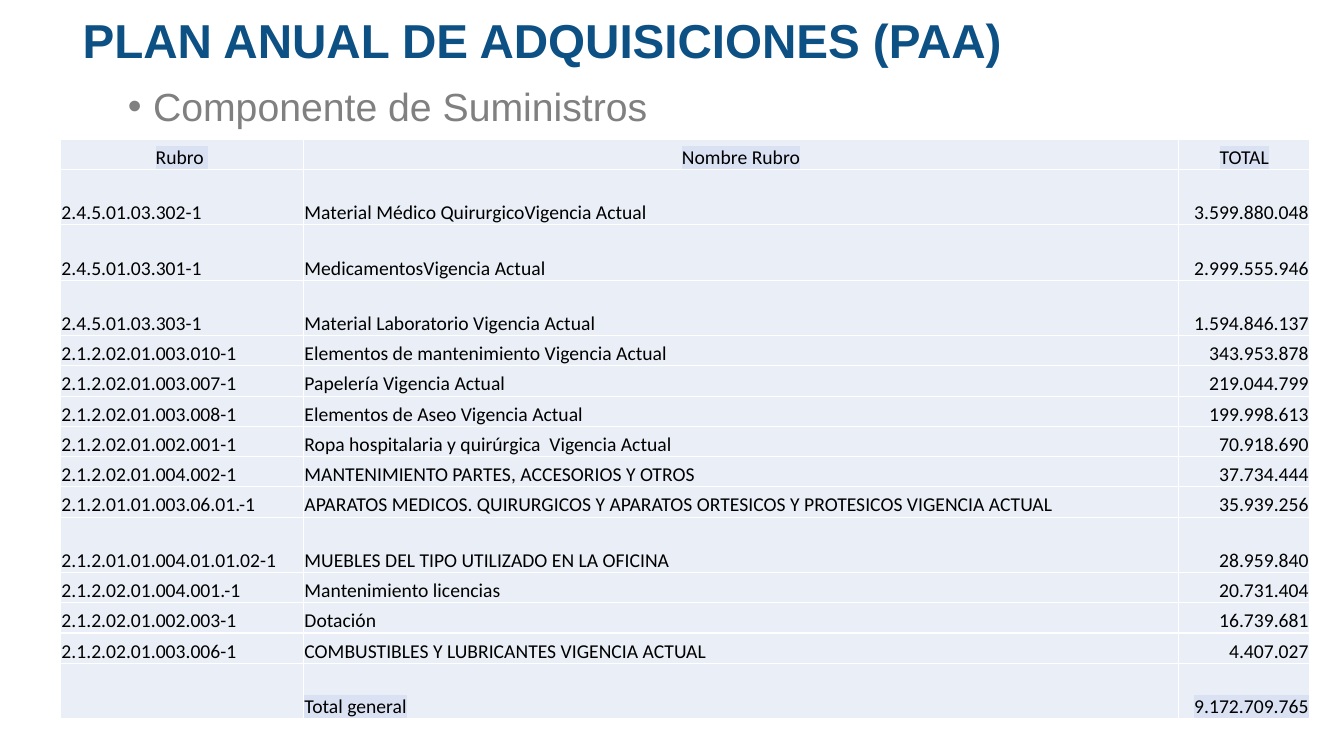
from lxml import etree
from pptx import Presentation
from pptx.dml.color import RGBColor
from pptx.enum.text import MSO_ANCHOR, PP_ALIGN
from pptx.oxml.ns import qn
from pptx.util import Inches, Pt

LEFT, CENTER, RIGHT = PP_ALIGN.LEFT, PP_ALIGN.CENTER, PP_ALIGN.RIGHT
TOP, BOTTOM = MSO_ANCHOR.TOP, MSO_ANCHOR.BOTTOM

# Content
TITLE = "PLAN ANUAL DE ADQUISICIONES (PAA)"
SUBTITLE = "Componente de Suministros"
ROWS = [
    ("Rubro ", "Nombre Rubro", "TOTAL"),
    ("2.4.5.01.03.302-1", "Material Médico QuirurgicoVigencia Actual", "3.599.880.048"),
    ("2.4.5.01.03.301-1", "MedicamentosVigencia Actual", "2.999.555.946"),
    ("2.4.5.01.03.303-1", "Material Laboratorio Vigencia Actual", "1.594.846.137"),
    ("2.1.2.02.01.003.010-1", "Elementos de mantenimiento Vigencia Actual", "343.953.878"),
    ("2.1.2.02.01.003.007-1", "Papelería Vigencia Actual", "219.044.799"),
    ("2.1.2.02.01.003.008-1", "Elementos de Aseo Vigencia Actual", "199.998.613"),
    ("2.1.2.02.01.002.001-1", "Ropa hospitalaria y quirúrgica  Vigencia Actual", "70.918.690"),
    ("2.1.2.02.01.004.002-1", "MANTENIMIENTO PARTES, ACCESORIOS Y OTROS", "37.734.444"),
    ("2.1.2.01.01.003.06.01.-1",
     "APARATOS MEDICOS. QUIRURGICOS Y APARATOS ORTESICOS Y PROTESICOS VIGENCIA ACTUAL",
     "35.939.256"),
    ("2.1.2.01.01.004.01.01.02-1", "MUEBLES DEL TIPO UTILIZADO EN LA OFICINA", "28.959.840"),
    ("2.1.2.02.01.004.001.-1", "Mantenimiento licencias", "20.731.404"),
    ("2.1.2.02.01.002.003-1", "Dotación", "16.739.681"),
    ("2.1.2.02.01.003.006-1", "COMBUSTIBLES Y LUBRICANTES VIGENCIA ACTUAL", "4.407.027"),
    ("", "Total general", "9.172.709.765"),
]
COLORS = {"title": "0D5084", "subtitle": "808080", "text": "000000",
          "cell": "EAEFF7", "highlight": "D9E1F2", "border": "FFFFFF"}

# Layout
COLUMN_WIDTHS = (2.41, 8.68, 1.3)
COLUMN_ALIGNS = (LEFT, LEFT, RIGHT)
LAST_ROW = len(ROWS) - 1
TALL_ROWS = {1, 2, 3, 10, LAST_ROW}
ROW_HEIGHTS = [0.55 if row in TALL_ROWS else 0.3 for row in range(len(ROWS))]


def add_span(para, text, font, size, color, bold=False):
    span = para.add_run()
    span.text = text
    span.font.name = font
    span.font.size = Pt(size)
    span.font.bold = bold
    span.font.color.rgb = RGBColor.from_string(COLORS[color])
    return span


def solid_fill(color):
    fill = etree.Element(qn("a:solidFill"))
    etree.SubElement(fill, qn("a:srgbClr"), val=COLORS[color])
    return fill


def add_highlight(span):
    highlight = etree.Element(qn("a:highlight"))
    etree.SubElement(highlight, qn("a:srgbClr"), val=COLORS["highlight"])
    span.font._element.find(qn("a:solidFill")).addnext(highlight)


def style_cell(cell):
    cell.fill.solid()
    cell.fill.fore_color.rgb = RGBColor.from_string(COLORS["cell"])
    cell.vertical_anchor = BOTTOM
    cell.margin_left = cell.margin_right = cell.margin_top = Inches(0.01)
    cell.margin_bottom = 0
    properties = cell._tc.get_or_add_tcPr()
    for position, side in enumerate(("a:lnL", "a:lnR", "a:lnT", "a:lnB")):
        border = etree.Element(qn(side), w=str(Pt(1)))
        border.append(solid_fill("border"))
        properties.insert(position, border)


deck = Presentation()
deck.slide_width, deck.slide_height = Inches(13.33), Inches(7.5)
page = deck.slides.add_slide(deck.slide_layouts[5])

# Title
title = page.shapes.title
title.left, title.top = Inches(0.72), Inches(0.06)
title.width, title.height = Inches(12.39), Inches(0.67)
title.text_frame.vertical_anchor = TOP
title.text_frame.word_wrap = True
para = title.text_frame.paragraphs[0]
para.alignment = LEFT
add_span(para, TITLE, "Arial", 34, "title", bold=True)

# Bulleted subtitle
box = page.shapes.add_textbox(Inches(1.17), Inches(0.77), Inches(10.04), Inches(0.6))
box.text_frame.word_wrap = True
para = box.text_frame.paragraphs[0]
indents = para._p.get_or_add_pPr()
indents.set("marL", str(Inches(0.25)))
indents.set("indent", str(Inches(-0.25)))
etree.SubElement(indents, qn("a:buFont"), typeface="Arial")
etree.SubElement(indents, qn("a:buChar"), char="•")
add_span(para, SUBTITLE, "Arial", 28, "subtitle")

# Budget table
frame = page.shapes.add_table(len(ROWS), len(COLUMN_WIDTHS), Inches(0.6), Inches(1.38),
                              Inches(sum(COLUMN_WIDTHS)), Inches(sum(ROW_HEIGHTS)))
table = frame.table
table.horz_banding = False
table.first_row = False
for column, width in zip(table.columns, COLUMN_WIDTHS):
    column.width = Inches(width)
for row, height in zip(table.rows, ROW_HEIGHTS):
    row.height = Inches(height)

for row, values in enumerate(ROWS):
    for column, value in enumerate(values):
        cell = table.cell(row, column)
        style_cell(cell)
        if not value:
            continue
        para = cell.text_frame.paragraphs[0]
        para.alignment = CENTER if row == 0 else COLUMN_ALIGNS[column]
        span = add_span(para, value, "Calibri", 14, "text")
        if row in (0, LAST_ROW):
            add_highlight(span)

deck.save("out.pptx")
